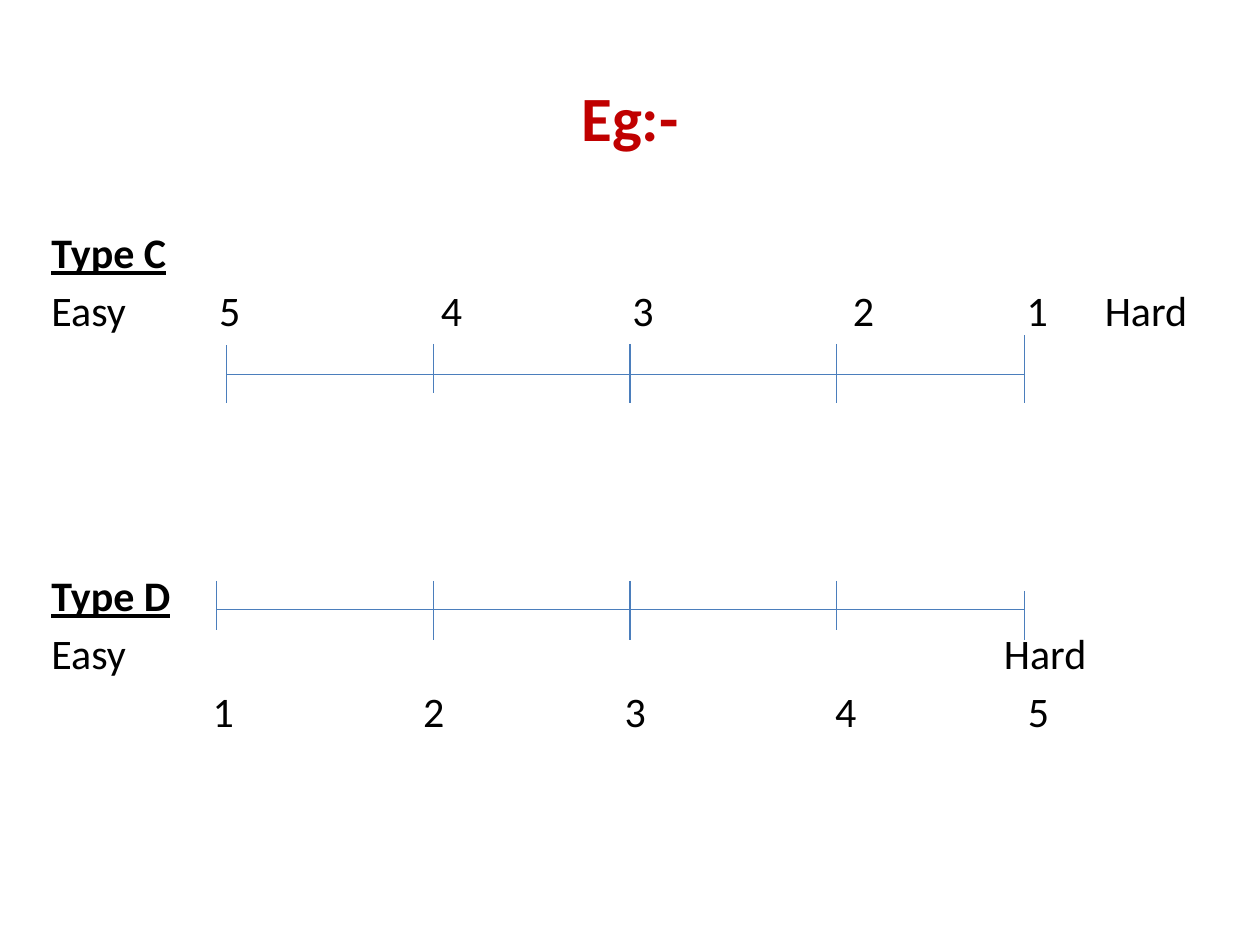
"""Build a slide showing two five-point rating scales from easy to hard."""
from lxml import etree
from pptx import Presentation
from pptx.dml.color import RGBColor
from pptx.enum.shapes import MSO_CONNECTOR
from pptx.enum.text import MSO_ANCHOR, PP_ALIGN
from pptx.oxml.ns import qn
from pptx.util import Inches, Pt

STRAIGHT = MSO_CONNECTOR.STRAIGHT
MIDDLE = MSO_ANCHOR.MIDDLE
CENTER = PP_ALIGN.CENTER
RED = RGBColor(0xC0, 0x00, 0x00)
BLACK = RGBColor(0x00, 0x00, 0x00)
BLUE = RGBColor(0x4B, 0x7E, 0xBC)

prs = Presentation()
prs.slide_width = Inches(10)
prs.slide_height = Inches(7.5)
slide = prs.slides.add_slide(prs.slide_layouts[6])


def style_font(paragraph, size, color, bold, underline=False):
    font = paragraph.font
    font.name = "Calibri"
    font.size = Pt(size)
    font.color.rgb = color
    font.bold = bold
    font.underline = underline


def add_line(x1, y1, x2, y2):
    line = slide.shapes.add_connector(
        STRAIGHT, Inches(x1), Inches(y1), Inches(x2), Inches(y2))
    line.line.color.rgb = BLUE
    line.line.width = Pt(0.75)
    etree.SubElement(line._element.spPr, qn("a:effectLst"))


title = slide.shapes.add_textbox(Inches(0.5), Inches(0.3), Inches(9), Inches(1.25))
title.text_frame.word_wrap = True
title.text_frame.vertical_anchor = MIDDLE
heading = title.text_frame.paragraphs[0]
heading.text = "Eg:-"
heading.alignment = CENTER
style_font(heading, 36, RED, True)

body = slide.shapes.add_textbox(Inches(0.31), Inches(1.75), Inches(9.45), Inches(4.95))
body.text_frame.word_wrap = True
rows = [
    ("Type C", True, 4.4, []),
    ("Easy\t5\t4\t3\t2\t1\tHard", False, 4.4, [1.33, 3.09, 4.61, 6.36, 7.74, 8.36]),
    ("Type D", True, 134, []),
    ("Easy\tHard", False, 4.4, [7.56]),
    ("\t1\t2\t3\t4\t5", False, 4.4, [1.28, 2.95, 4.55, 6.22, 7.75]),
]
for index, (wording, is_heading, space, stops) in enumerate(rows):
    row = body.text_frame.paragraphs[0] if index == 0 else body.text_frame.add_paragraph()
    row.text = wording
    row.space_before = Pt(space)
    if stops:
        tabs = etree.SubElement(row._p.get_or_add_pPr(), qn("a:tabLst"))
        for stop in stops:
            etree.SubElement(tabs, qn("a:tab"), pos=str(Inches(stop)), algn="l")
    style_font(row, 24, BLACK, is_heading, is_heading)

scales = [
    (2.97, [(1.8, 2.74, 3.2), (3.44, 2.73, 3.12), (5, 2.73, 3.2),
            (6.64, 2.73, 3.2), (8.13, 2.66, 3.2)]),
    (4.84, [(1.72, 4.61, 5), (3.44, 4.61, 5.08), (5, 4.61, 5.08),
            (6.64, 4.61, 5), (8.13, 4.69, 5.08)]),
]
for axis_y, ticks in scales:
    add_line(ticks[0][0], axis_y, ticks[-1][0], axis_y)
    for x, top, bottom in ticks:
        add_line(x, top, x, bottom)

prs.save("out.pptx")
